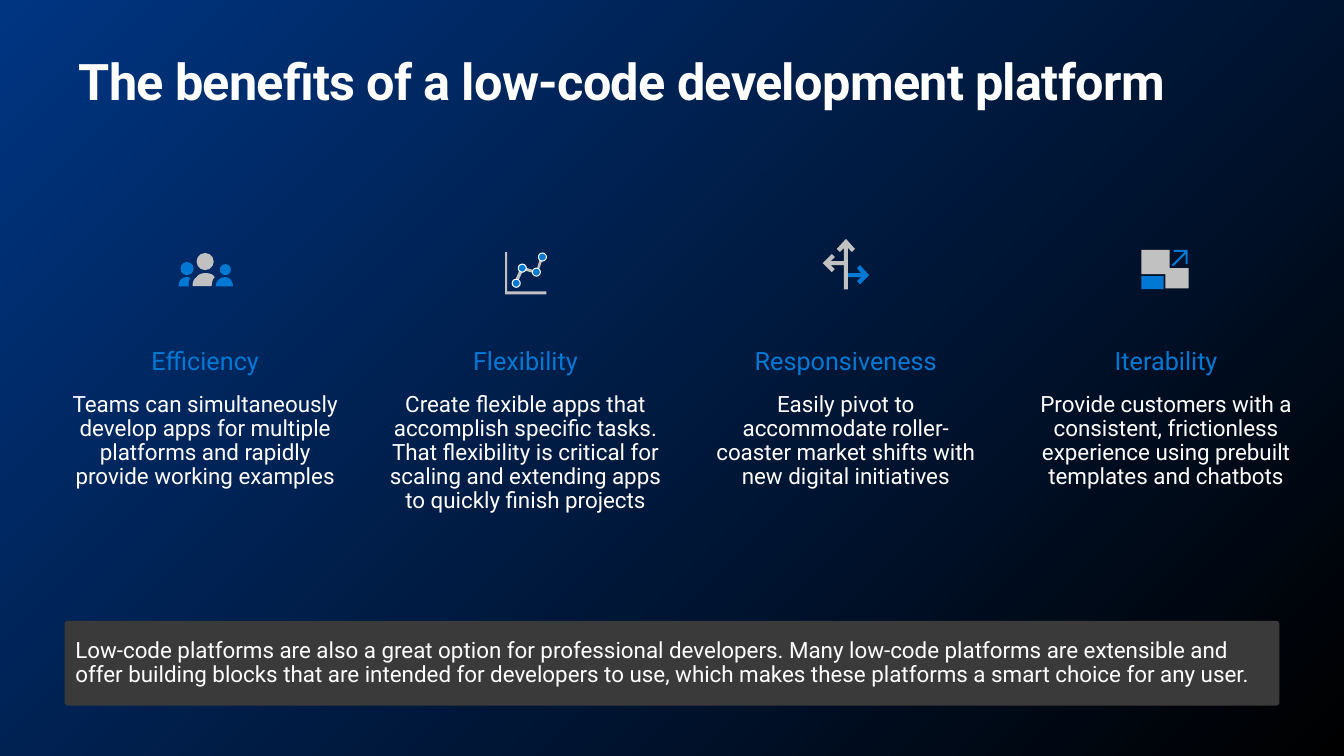
from dataclasses import dataclass
from typing import Callable, Union

import pptx
import pptx.dml.color
import pptx.enum.shapes
import pptx.enum.text
import pptx.util

Inches = pptx.util.Inches
Shape = pptx.enum.shapes.MSO_SHAPE
Align = pptx.enum.text.PP_ALIGN
Anchor = pptx.enum.text.MSO_ANCHOR

FONT = "Roboto"
WHITE, BLUE, GREY, PANEL = "FFFFFF", "0078D4", "C1C1C1", "3A3A3A"
FIRST_LEFT, LAST_LEFT = 0.66, 10.19
CURVE_STEPS = 8


@dataclass(frozen=True)
class Outline:
    """Points are line ends; six numbers are a cubic curve."""
    color: str
    steps: list[tuple[float, ...]]


@dataclass(frozen=True)
class Preset:
    color: str
    kind: int
    left: float
    top: float
    width: float
    height: float
    line: str = ""


@dataclass(frozen=True)
class Benefit:
    heading: str
    body: str
    icon: list[Union[Outline, Preset]]


def rgb(color: str) -> pptx.dml.color.RGBColor:
    return pptx.dml.color.RGBColor.from_string(color)


def paint(shape, color: str, line: str = "") -> None:
    shape.shadow.inherit = False
    shape.fill.solid()
    shape.fill.fore_color.rgb = rgb(color)
    if line:
        shape.line.color.rgb = rgb(line)
        shape.line.width = pptx.util.Pt(0.75)
    else:
        shape.line.fill.background()


def write(para, text: str, *, size: float, color: str = WHITE, bold: bool = False,
          align: int = Align.LEFT, line_spacing: float = 0.9, gap: float = 6) -> None:
    para.alignment = align
    para.line_spacing = line_spacing
    para.space_before = para.space_after = pptx.util.Pt(gap)
    span = para.add_run()
    span.text = text
    span.font.name = FONT
    span.font.size = pptx.util.Pt(size)
    span.font.bold = bold
    span.font.color.rgb = rgb(color)


def set_frame(box, margins: tuple[float, float, float, float], anchor: int = Anchor.TOP):
    frame = box.text_frame
    frame.word_wrap = True
    frame.vertical_anchor = anchor
    (frame.margin_left, frame.margin_top,
     frame.margin_right, frame.margin_bottom) = map(Inches, margins)
    return frame


def add_text_box(page, left: float, top: float, width: float, height: float, inset: float = 0):
    box = page.shapes.add_textbox(*map(Inches, (left, top, width, height)))
    return set_frame(box, (inset, 0, 0, 0))


def flatten(steps: list[tuple[float, ...]]) -> list[tuple[int, int]]:
    points = [steps[0]]
    for step in steps[1:]:
        if len(step) == 2:
            points.append(step)
            continue
        knots = [points[-1], step[:2], step[2:4], step[4:]]
        for index in range(1, CURVE_STEPS + 1):
            t = index / CURVE_STEPS
            weights = ((1 - t) ** 3, 3 * t * (1 - t) ** 2, 3 * t * t * (1 - t), t ** 3)
            points.append(tuple(sum(w * k[axis] for w, k in zip(weights, knots))
                                for axis in (0, 1)))
    return [(Inches(x), Inches(y)) for x, y in points]


def draw_icon(page, parts: list[Union[Outline, Preset]]) -> None:
    group = page.shapes.add_group_shape()
    for part in parts:
        if isinstance(part, Outline):
            start, *rest = flatten(part.steps)
            builder = group.shapes.build_freeform(*start)
            builder.add_line_segments(rest, close=True)
            paint(builder.convert_to_shape(), part.color)
        else:
            place = map(Inches, (part.left, part.top, part.width, part.height))
            paint(group.shapes.add_shape(part.kind, *place), part.color, part.line)


def head(color: str, left: float, top: float, size: float) -> Preset:
    return Preset(color, Shape.OVAL, left, top, size, size)


def marker(left: float, top: float) -> Preset:
    return Preset(BLUE, Shape.OVAL, left, top, 0.08, 0.08, WHITE)


# Icons
PEOPLE = [
    Outline(BLUE, [(1.77, 2.84), (1.87, 2.84), (1.87, 2.81, 1.87, 2.78, 1.89, 2.76),
                   (1.88, 2.75, 1.86, 2.75, 1.85, 2.75), (1.8, 2.75, 1.77, 2.79, 1.77, 2.84)]),
    Outline(GREY, [(1.95, 2.75), (1.92, 2.77, 1.91, 2.8, 1.91, 2.84), (2.1, 2.84),
                   (2.1, 2.8, 2.11, 2.77, 2.13, 2.75), (2.11, 2.72, 2.08, 2.71, 2.04, 2.71),
                   (2, 2.71, 1.97, 2.72, 1.95, 2.75)]),
    Outline(BLUE, [(2.23, 2.75), (2.18, 2.75, 2.14, 2.79, 2.14, 2.84), (2.31, 2.84),
                   (2.31, 2.79, 2.28, 2.75, 2.23, 2.75)]),
    head(BLUE, 2.18, 2.62, 0.11), head(GREY, 1.95, 2.51, 0.17), head(BLUE, 1.79, 2.6, 0.13),
]
CHART = [
    Outline(GREY, [(5.13, 2.81), (5.1, 2.8), (5.17, 2.64), (5.32, 2.69), (5.36, 2.54),
                   (5.39, 2.55), (5.33, 2.72), (5.19, 2.68)]),
    Outline(GREY, [(5.03, 2.89), (5.03, 2.5), (5.01, 2.5), (5.01, 2.92), (5.42, 2.92),
                   (5.42, 2.89)]),
    marker(5.34, 2.51), marker(5.08, 2.77), marker(5.14, 2.62), marker(5.28, 2.66),
]
ARROWS = [
    Outline(BLUE, [(8.41, 2.75), (8.54, 2.75), (8.5, 2.79), (8.53, 2.82), (8.62, 2.73),
                   (8.53, 2.63), (8.5, 2.66), (8.54, 2.71), (8.41, 2.71)]),
    Outline(GREY, [(8.41, 2.87), (8.41, 2.46), (8.45, 2.5), (8.48, 2.47), (8.39, 2.37),
                   (8.3, 2.47), (8.33, 2.5), (8.37, 2.46), (8.37, 2.59), (8.24, 2.59),
                   (8.28, 2.55), (8.25, 2.52), (8.16, 2.61), (8.25, 2.7), (8.28, 2.67),
                   (8.24, 2.63), (8.37, 2.63), (8.37, 2.87)]),
]
BLOCKS = [
    Outline(GREY, [(11.32, 2.48), (11.6, 2.48), (11.6, 2.66), (11.79, 2.66), (11.79, 2.86),
                   (11.56, 2.86), (11.56, 2.72), (11.32, 2.72)]),
    Outline(BLUE, [(11.75, 2.5), (11.64, 2.5), (11.64, 2.48), (11.78, 2.48), (11.78, 2.62),
                   (11.76, 2.62), (11.76, 2.52), (11.64, 2.64), (11.62, 2.63)]),
    Preset(BLUE, Shape.RECTANGLE, 11.32, 2.74, 0.22, 0.13),
]

BENEFITS = [
    Benefit("Efficiency", "Teams can simultaneously develop apps for multiple platforms "
            "and rapidly provide working examples", PEOPLE),
    Benefit("Flexibility", "Create flexible apps that accomplish specific tasks. That flexibility "
            "is critical for scaling and extending apps to quickly finish projects", CHART),
    Benefit("Responsiveness", "Easily pivot to accommodate roller-coaster market shifts "
            "with new digital initiatives", ARROWS),
    Benefit("Iterability", "Provide customers with a consistent, frictionless experience "
            "using prebuilt templates and chatbots", BLOCKS),
]


def main() -> None:
    deck = pptx.Presentation()
    deck.slide_width, deck.slide_height = Inches(13.33), Inches(7.5)
    page = deck.slides.add_slide(deck.slide_layouts[6])

    # Background
    backdrop = page.background.fill
    backdrop.gradient()
    backdrop.gradient_angle = 315
    for stop, color in zip(backdrop.gradient_stops, ("003582", "000000")):
        stop.color.rgb = rgb(color)

    # Title
    title = add_text_box(page, 0.64, 0.5, 12.05, 0.61, inset=0.14).paragraphs[0]
    write(title, "The benefits of a low-code development platform",
          size=36, bold=True, line_spacing=1.0, gap=0)
    title.runs[0].font._element.set("spc", "-50")

    # Benefit columns
    pitch = (LAST_LEFT - FIRST_LEFT) / (len(BENEFITS) - 1)
    for column, benefit in enumerate(BENEFITS):
        frame = add_text_box(page, FIRST_LEFT + column * pitch, 3.46, 2.75, 1.63)
        write(frame.paragraphs[0], benefit.heading, size=18, color=BLUE, align=Align.CENTER)
        write(frame.add_paragraph(), benefit.body, size=16, align=Align.CENTER)
        draw_icon(page, benefit.icon)

    # Closing note
    note = page.shapes.add_shape(Shape.ROUNDED_RECTANGLE, *map(Inches, (0.64, 6.16, 12.05, 0.84)))
    note.adjustments[0] = 0.038
    paint(note, PANEL)
    write(set_frame(note, (0.1,) * 4, Anchor.MIDDLE).paragraphs[0],
          "Low-code platforms are also a great option for professional developers. Many low-code "
          "platforms are extensible and offer building blocks that are intended for developers "
          "to use, which makes these platforms a smart choice for any user.", size=16)


    deck.save("out.pptx")


if __name__ == "__main__":
    main()
